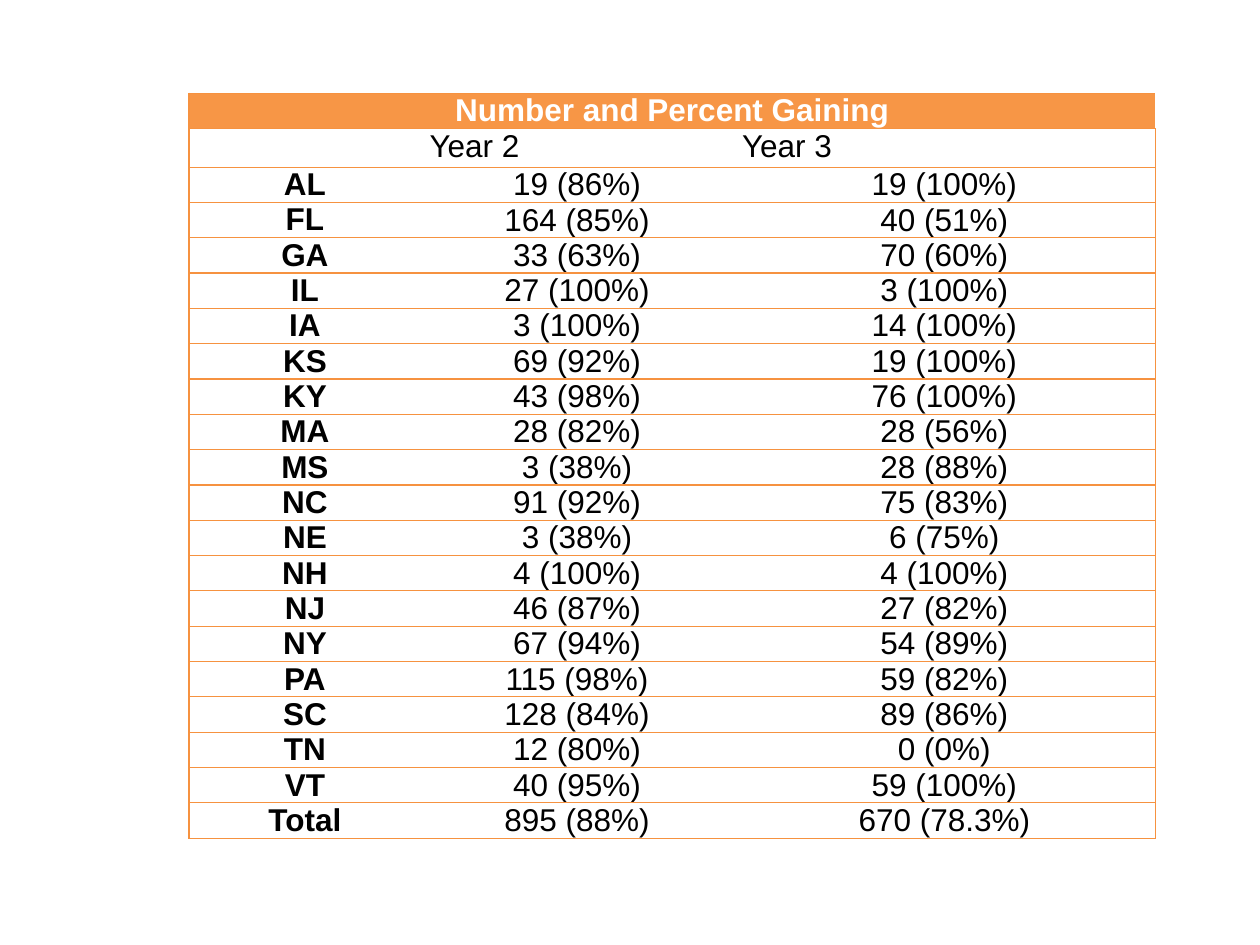
from dataclasses import dataclass
from typing import NamedTuple

from lxml.etree import SubElement
from pptx import Presentation
from pptx.dml.color import RGBColor
from pptx.enum.text import MSO_ANCHOR, PP_ALIGN
from pptx.oxml.ns import qn
from pptx.util import Inches, Pt


@dataclass(frozen=True)
class Theme:
    head: str = "F79646"
    line: str = "F69240"
    ink: str = "000000"
    white: str = "FFFFFF"
    font: str = "Arial"
    size: float = 18
    rule: float = 0.75


class State(NamedTuple):
    name: str
    year2: str
    year3: str


THEME = Theme()
TITLE = "Number and Percent Gaining"
YEARS = State("", "Year 2", "Year 3")
STATES = [
    State("AL", "19 (86%)", "19 (100%)"),
    State("FL", "164 (85%)", "40 (51%)"),
    State("GA", "33 (63%)", "70 (60%)"),
    State("IL", "27 (100%)", "3 (100%)"),
    State("IA", "3 (100%)", "14 (100%)"),
    State("KS", "69 (92%)", "19 (100%)"),
    State("KY", "43 (98%)", "76 (100%)"),
    State("MA", "28 (82%)", "28 (56%)"),
    State("MS", "3 (38%)", "28 (88%)"),
    State("NC", "91 (92%)", "75 (83%)"),
    State("NE", "3 (38%)", "6 (75%)"),
    State("NH", "4 (100%)", "4 (100%)"),
    State("NJ", "46 (87%)", "27 (82%)"),
    State("NY", "67 (94%)", "54 (89%)"),
    State("PA", "115 (98%)", "59 (82%)"),
    State("SC", "128 (84%)", "89 (86%)"),
    State("TN", "12 (80%)", "0 (0%)"),
    State("VT", "40 (95%)", "59 (100%)"),
    State("Total", "895 (88%)", "670 (78.3%)"),
]
WIDTHS = (1.84, 2.48, 3.35)
HEIGHT = 0.28


def border(cell, sides: str) -> None:
    props = cell._tc.get_or_add_tcPr()
    for side in "LRTB":
        line = SubElement(props, qn(f"a:ln{side}"), w=str(Pt(THEME.rule)))
        if side in sides:
            fill = SubElement(line, qn("a:solidFill"))
            SubElement(fill, qn("a:srgbClr"), val=THEME.line)
        else:
            SubElement(line, qn("a:noFill"))


def write(cell, text: str, color: str, bold: bool, align: PP_ALIGN) -> None:
    cell.text = text
    para = cell.text_frame.paragraphs[0]
    para.alignment = align
    font = para.font
    font.name = THEME.font
    font.size = Pt(THEME.size)
    font.bold = bold
    font.color.rgb = RGBColor.from_string(color)


def style(cell, col: int, head: bool) -> None:
    cell.margin_left = cell.margin_right = Inches(0.07)
    cell.margin_top = cell.margin_bottom = 0
    border(cell, "TB" + {0: "L", len(WIDTHS) - 1: "R"}.get(col, ""))
    if head:
        cell.fill.solid()
        cell.fill.fore_color.rgb = RGBColor.from_string(THEME.head)
    else:
        cell.fill.background()


def build(slide) -> None:
    rows = [State(TITLE, "", ""), YEARS, *STATES]
    frame = slide.shapes.add_table(
        len(rows), len(WIDTHS), Inches(1.5), Inches(0.74),
        Inches(sum(WIDTHS)), Inches(HEIGHT * len(rows)),
    )
    table = frame.table
    table.first_row = table.horz_banding = False
    for col, width in zip(table.columns, WIDTHS):
        col.width = Inches(width)
    for r, row in enumerate(rows):
        table.rows[r].height = Inches(HEIGHT)
        head = r == 0
        align = PP_ALIGN.LEFT if row is YEARS else PP_ALIGN.CENTER
        for c, text in enumerate(row):
            cell = table.cell(r, c)
            style(cell, c, head)
            if r > 1 and c > 0:
                cell.vertical_anchor = MSO_ANCHOR.BOTTOM
            if text:
                write(cell, text, THEME.white if head else THEME.ink, c == 0, align)
    table.cell(0, 0).merge(table.cell(0, len(WIDTHS) - 1))


def main() -> None:
    deck = Presentation()
    deck.slide_width = Inches(10)
    deck.slide_height = Inches(7.5)
    build(deck.slides.add_slide(deck.slide_layouts[6]))
    deck.save("out.pptx")


if __name__ == "__main__":
    main()
